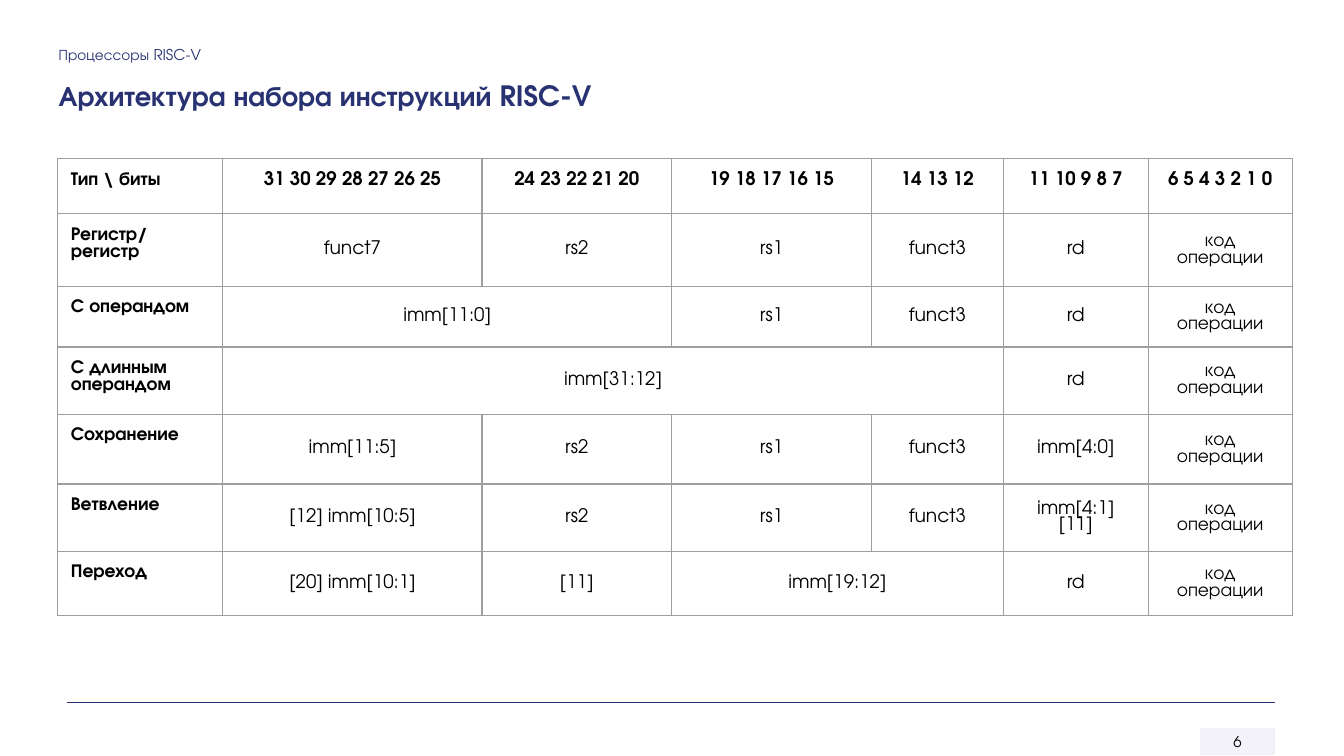
from lxml.etree import SubElement
from pptx import Presentation
from pptx.dml.color import RGBColor
from pptx.enum.shapes import MSO_CONNECTOR as Connector, MSO_SHAPE as Shape
from pptx.enum.text import MSO_ANCHOR as Anchor, PP_ALIGN as Align
from pptx.oxml.ns import qn
from pptx.util import Cm, Pt

FONT = "TeX Gyre Adventor"
NAVY = RGBColor(0x28, 0x32, 0x72)
BLACK = RGBColor(0, 0, 0)
WHITE = RGBColor(0xFF, 0xFF, 0xFF)
LAVENDER = RGBColor(0xF3, 0xF1, 0xF9)
GRAY = RGBColor(0x9E, 0x9E, 0x9E)

COLUMN_WIDTHS = (3.12, 4.9, 3.58, 3.78, 2.49, 2.74, 2.72)
ROW_HEIGHTS = (1.04, 1.37, 1.15, 1.27, 1.32, 1.27, 1.22)
OPCODE = "код операции"
ROWS = (
    ("Тип \\ биты", "31 30 29 28 27 26 25", "24 23 22 21 20", "19 18 17 16 15",
     "14 13 12", "11 10 9 8 7", "6 5 4 3 2 1 0"),
    ("Регистр/ регистр", "funct7", "rs2", "rs1", "funct3", "rd", OPCODE),
    ("С операндом", "imm[11:0]", None, "rs1", "funct3", "rd", OPCODE),
    ("С длинным операндом", "imm[31:12]", None, None, None, "rd", OPCODE),
    ("Сохранение", "imm[11:5]", "rs2", "rs1", "funct3", "imm[4:0]", OPCODE),
    ("Ветвление", "[12] imm[10:5]", "rs2", "rs1", "funct3", "imm[4:1]\n[11]", OPCODE),
    ("Переход", "[20] imm[10:1]", "[11]", "imm[19:12]", None, "rd", OPCODE),
)


def write_text(frame, text, size, color, bold=False, align=Align.LEFT, spacing=None):
    """Write each line of the text as a paragraph with one run."""
    frame.word_wrap = True
    for index, line in enumerate(text.split("\n")):
        paragraph = frame.add_paragraph() if index else frame.paragraphs[0]
        paragraph.alignment = align
        paragraph.line_spacing = spacing
        run = paragraph.add_run()
        run.text = line
        run.font.name = FONT
        run.font.size = Pt(size)
        run.font.bold = bold
        run.font.color.rgb = color


def set_margins(target, margin):
    """Give a cell or a text frame the same margin on every side."""
    target.margin_left = target.margin_right = margin
    target.margin_top = target.margin_bottom = margin


def add_heading(slide, left, top, width, height, text, size, bold=False):
    """Add one line of the slide heading."""
    box = slide.shapes.add_textbox(left, top, width, height)
    set_margins(box.text_frame, Cm(0.25))
    write_text(box.text_frame, text, size, NAVY, bold)


def set_borders(cell):
    """Draw thin gray borders around a cell."""
    properties = cell._tc.get_or_add_tcPr()
    for position, side in enumerate(("a:lnL", "a:lnR", "a:lnT", "a:lnB")):
        line = properties.makeelement(qn(side), {"w": str(Pt(0.75))})
        fill = SubElement(line, qn("a:solidFill"))
        SubElement(fill, qn("a:srgbClr"), val=str(GRAY))
        properties.insert(position, line)


def add_instruction_table(slide, left, top):
    """Add the instruction formats, merging the fields that span columns."""
    frame = slide.shapes.add_table(
        len(ROWS), len(COLUMN_WIDTHS), left, top,
        Cm(sum(COLUMN_WIDTHS)), Cm(sum(ROW_HEIGHTS)))
    table = frame.table
    for column, width in zip(table.columns, COLUMN_WIDTHS):
        column.width = Cm(width)
    for row, height in zip(table.rows, ROW_HEIGHTS):
        row.height = Cm(height)
    for row_index, texts in enumerate(ROWS):
        for column_index, text in enumerate(texts):
            cell = table.cell(row_index, column_index)
            cell.fill.solid()
            cell.fill.fore_color.rgb = WHITE
            set_margins(cell, Cm(0.25))
            set_borders(cell)
            if text is None:
                continue
            end = column_index
            while end + 1 < len(texts) and texts[end + 1] is None:
                end += 1
            if end > column_index:
                cell.merge(table.cell(row_index, end))
            is_label = row_index == 0 or column_index == 0
            cell.vertical_anchor = Anchor.TOP if is_label else Anchor.MIDDLE
            align = Align.CENTER if column_index else Align.LEFT
            write_text(cell.text_frame, text, 10, BLACK, is_label, align, Pt(9))


def add_footer(slide, left, top, width, number):
    """Add the rule and the page number at its right end."""
    rule = slide.shapes.add_connector(Connector.STRAIGHT, left, top, left + width, top)
    rule.line.color.rgb = NAVY
    rule.line.width = Pt(1)
    SubElement(rule._element.spPr, qn("a:effectLst"))
    badge_width = Cm(1.42)
    badge = slide.shapes.add_shape(
        Shape.RECTANGLE, left + width - badge_width, top + Cm(0.48), badge_width, Cm(0.51))
    badge.shadow.inherit = False
    badge.fill.solid()
    badge.fill.fore_color.rgb = LAVENDER
    color = badge.fill._xPr.find(".//" + qn("a:srgbClr"))
    SubElement(color, qn("a:alpha"), val="90000")
    badge.line.fill.background()
    set_margins(badge.text_frame, Cm(0.1))
    badge.text_frame.vertical_anchor = Anchor.MIDDLE
    write_text(badge.text_frame, number, 8, BLACK, align=Align.CENTER)


def main():
    """Build the slide and save it."""
    presentation = Presentation()
    presentation.slide_width = Cm(25.4)
    presentation.slide_height = Cm(14.29)
    slide = presentation.slides.add_slide(presentation.slide_layouts[6])
    add_footer(slide, Cm(1.27), Cm(13.28), Cm(22.83), "6")
    add_heading(slide, Cm(0.86), Cm(0.69), Cm(12.67), Cm(0.66), "Процессоры RISC‑V", 8)
    add_heading(slide, Cm(0.86), Cm(1.24), Cm(19.38), Cm(0.89),
                "Архитектура набора инструкций RISC‑V", 15, True)
    add_instruction_table(slide, Cm(1.09), Cm(3))
    presentation.save("out.pptx")


if __name__ == "__main__":
    main()
